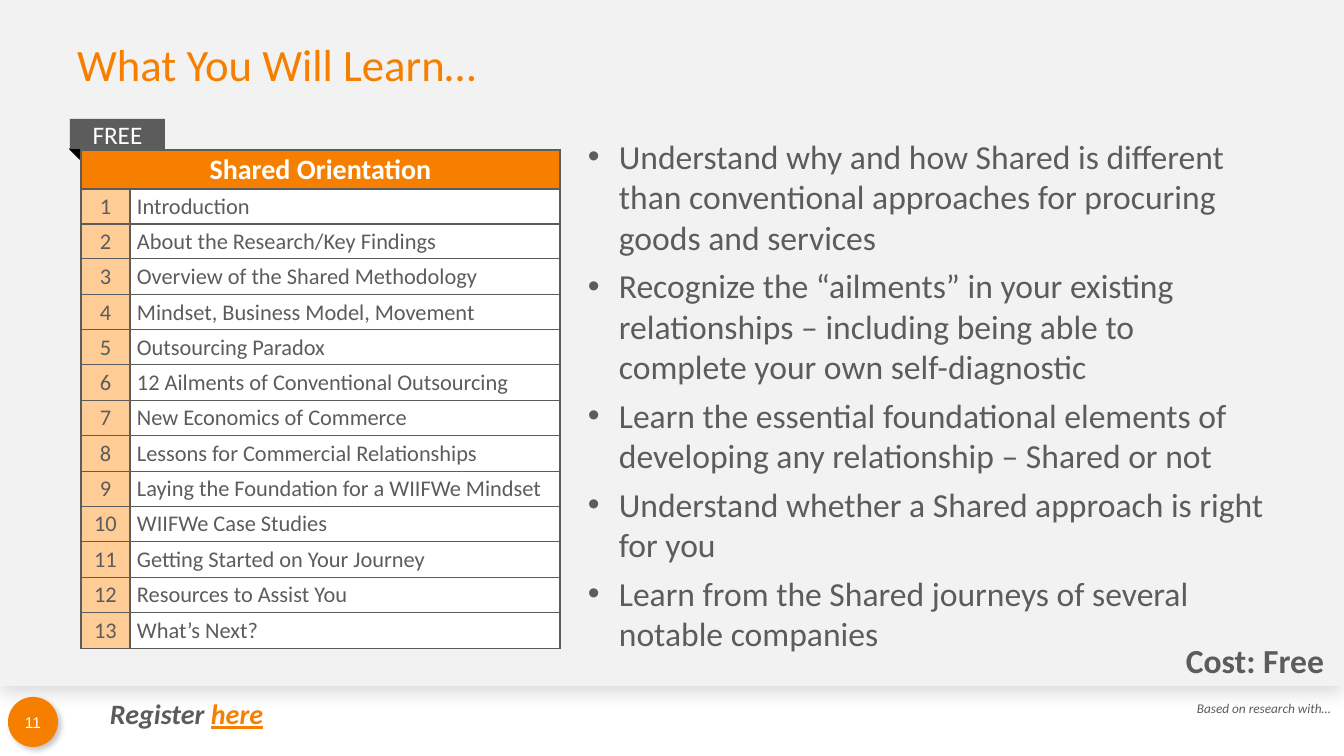
from dataclasses import dataclass

from lxml import etree
from pptx import Presentation, util as u
from pptx.dml.color import RGBColor
from pptx.enum import shapes, text as t
from pptx.oxml.ns import qn

SCALE = 12192000 / 1344
INK = {"grey": "5C5C5C", "orange": "F77F00", "peach": "FFCC96",
       "white": "FFFFFF", "black": "000000", "panel": "F2F2F2"}
LEFT, MID, RIGHT = t.PP_ALIGN.LEFT, t.PP_ALIGN.CENTER, t.PP_ALIGN.RIGHT
TOP, CENTRE, BASE = t.MSO_ANCHOR.TOP, t.MSO_ANCHOR.MIDDLE, t.MSO_ANCHOR.BOTTOM

TOPICS = [
    "Introduction", "About the Research/Key Findings",
    "Overview of the Shared Methodology", "Mindset, Business Model, Movement",
    "Outsourcing Paradox", "12 Ailments of Conventional Outsourcing",
    "New Economics of Commerce", "Lessons for Commercial Relationships",
    "Laying the Foundation for a WIIFWe Mindset", "WIIFWe Case Studies",
    "Getting Started on Your Journey", "Resources to Assist You",
    "What’s Next?",
]
GOALS = [
    "Understand why and how Shared is different than conventional approaches "
    "for procuring goods and services",
    "Recognize the “ailments” in your existing relationships – including "
    "being able to complete your own self-diagnostic",
    "Learn the essential foundational elements of developing any "
    "relationship – Shared or not",
    "Understand whether a Shared approach is right for you",
    "Learn from the Shared journeys of several notable companies",
]


@dataclass
class Box:
    x: int
    y: int
    w: int
    h: int


@dataclass
class Style:
    size: float
    ink: str = "grey"
    bold: bool = False
    slant: bool = False
    face: str = "Calibri"
    align: t.PP_ALIGN = LEFT


@dataclass
class Label:
    words: str
    box: Box
    style: Style
    anchor: t.MSO_ANCHOR = TOP
    wrap: bool = True


@dataclass
class Shade:
    alpha: int
    blur: int
    dist: int
    angle: int


def px(n: float) -> u.Emu:
    return u.Emu(round(n * SCALE))


def rgb(ink: str) -> RGBColor:
    return RGBColor.from_string(INK[ink])


def place(item, box: Box) -> None:
    item.left, item.top = px(box.x), px(box.y)
    item.width, item.height = px(box.w), px(box.h)


def write(frame, words: str, style: Style) -> None:
    """Fill a text frame, one paragraph per line of words."""
    frame.text = words
    for para in frame.paragraphs:
        para.alignment = style.align
        for run in para.runs:
            font = run.font
            font.name, font.size = style.face, u.Pt(style.size)
            font.bold, font.italic = style.bold, style.slant
            font.color.rgb = rgb(style.ink)


def add_label(slide, label: Label):
    box = label.box
    frame = slide.shapes.add_textbox(
        px(box.x), px(box.y), px(box.w), px(box.h)).text_frame
    frame.word_wrap, frame.vertical_anchor = label.wrap, label.anchor
    write(frame, label.words, label.style)
    return frame


def add_form(slide, kind, box: Box, ink: str, shade: Shade | None = None):
    form = slide.shapes.add_shape(
        kind, px(box.x), px(box.y), px(box.w), px(box.h))
    form.shadow.inherit = False
    form.fill.solid()
    form.fill.fore_color.rgb = rgb(ink)
    form.line.fill.background()
    if shade:
        cast = etree.SubElement(
            form.element.spPr.find(qn("a:effectLst")), qn("a:outerShdw"),
            blurRad=str(u.Pt(shade.blur)), dist=str(u.Pt(shade.dist)),
            dir=str(shade.angle * 60000), algn="ctr", rotWithShape="0")
        tone = etree.SubElement(cast, qn("a:srgbClr"), val=INK["black"])
        etree.SubElement(tone, qn("a:alpha"), val=str(shade.alpha * 1000))
    return form


def set_cell(cell, words: str, style: Style, fill: str) -> None:
    cell.margin_left = cell.margin_right = px(7)
    cell.margin_top = cell.margin_bottom = 0
    cell.vertical_anchor = CENTRE
    write(cell.text_frame, words, style)
    props = cell._tc.get_or_add_tcPr()
    for side in ("a:lnL", "a:lnR", "a:lnT", "a:lnB"):
        edge = etree.SubElement(props, qn(side), w=str(u.Pt(1)))
        paint = etree.SubElement(edge, qn("a:solidFill"))
        etree.SubElement(paint, qn("a:srgbClr"), val=INK["grey"])
    cell.fill.solid()
    cell.fill.fore_color.rgb = rgb(fill)


def add_topics(slide) -> None:
    head, body, count = 39, 460, len(TOPICS)
    table = slide.shapes.add_table(
        count + 1, 2, px(81), px(150), px(479), px(head + body)).table
    for col, width in zip(table.columns, (49, 430)):
        col.width = px(width)
    table.rows[0].height = px(head)
    title = Style(20, "white", bold=True, align=MID)
    for col, words in enumerate(("Shared Orientation", "")):
        set_cell(table.cell(0, col), words, title, "orange")
    table.cell(0, 0).merge(table.cell(0, 1))
    for row, topic in enumerate(TOPICS, 1):
        table.rows[row].height = px(body * row // count - body * (row - 1) // count)
        set_cell(table.cell(row, 0), str(row), Style(16, align=MID), "peach")
        set_cell(table.cell(row, 1), topic, Style(16), "white")


def add_goals(slide) -> None:
    frame = add_label(slide, Label("\n".join(GOALS), Box(578, 131, 700, 551), Style(24)))
    for i, para in enumerate(frame.paragraphs):
        props = para._p.get_or_add_pPr()
        props.set("marL", str(px(31)))
        props.set("indent", str(px(-31)))
        etree.SubElement(props, qn("a:buFont"), typeface="Arial")
        etree.SubElement(props, qn("a:buChar"), char="•")
        para.space_before = u.Pt(6 if i else 0)


def add_title(slide) -> None:
    title = slide.shapes.title
    title.element.getparent().append(title.element)
    place(title, Box(67, 20, 1210, 87))
    frame = title.text_frame
    frame.auto_size, frame.vertical_anchor = t.MSO_AUTO_SIZE.NONE, CENTRE
    write(frame, "What You Will Learn…", Style(32, "orange"))


def add_tab(slide) -> None:
    fold = add_form(slide, shapes.MSO_SHAPE.ISOSCELES_TRIANGLE,
                    Box(65, 144, 20, 10), "black")
    fold.rotation = 270
    fold.line.color.rgb = rgb("black")
    fold.line.width = u.Pt(1)
    flag = add_form(slide, shapes.MSO_SHAPE.RECTANGLE, Box(70, 119, 95, 30), "grey")
    flag.text_frame.vertical_anchor = CENTRE
    write(flag.text_frame, "FREE", Style(18, "white", align=MID))


def add_link(slide) -> None:
    style = Style(20, bold=True, slant=True)
    frame = add_label(slide, Label("Register ", Box(100, 692, 174, 44), style, wrap=False))
    run = frame.paragraphs[0].add_run()
    run.text = "here"
    font = run.font
    font.name, font.size = style.face, u.Pt(style.size)
    font.bold = font.italic = font.underline = True
    font.color.rgb = rgb("orange")


def main() -> None:
    deck = Presentation()
    deck.slide_width, deck.slide_height = px(1344), px(756)
    slide = deck.slides.add_slide(deck.slide_layouts[5])
    add_form(slide, shapes.MSO_SHAPE.RECTANGLE, Box(0, 0, 1344, 686), "panel",
             Shade(15, 14, 5, 90))
    add_label(slide, Label("Based on research with…", Box(1187, 695, 155, 26),
                           Style(9.5, slant=True), wrap=False))
    add_form(slide, shapes.MSO_SHAPE.OVAL, Box(8, 697, 50, 50), "orange",
             Shade(22, 4, 3, 45))
    add_label(slide, Label("11", Box(13, 702, 40, 40),
                           Style(11, "white", face="Arial", align=MID), CENTRE))
    cost = add_label(slide, Label("Cost: Free", Box(1041, 635, 303, 50),
                                  Style(24, bold=True, align=RIGHT), BASE))
    cost.margin_right = px(20)
    add_goals(slide)
    add_title(slide)
    add_link(slide)
    add_tab(slide)
    add_topics(slide)
    deck.save("out.pptx")


if __name__ == "__main__":
    main()
